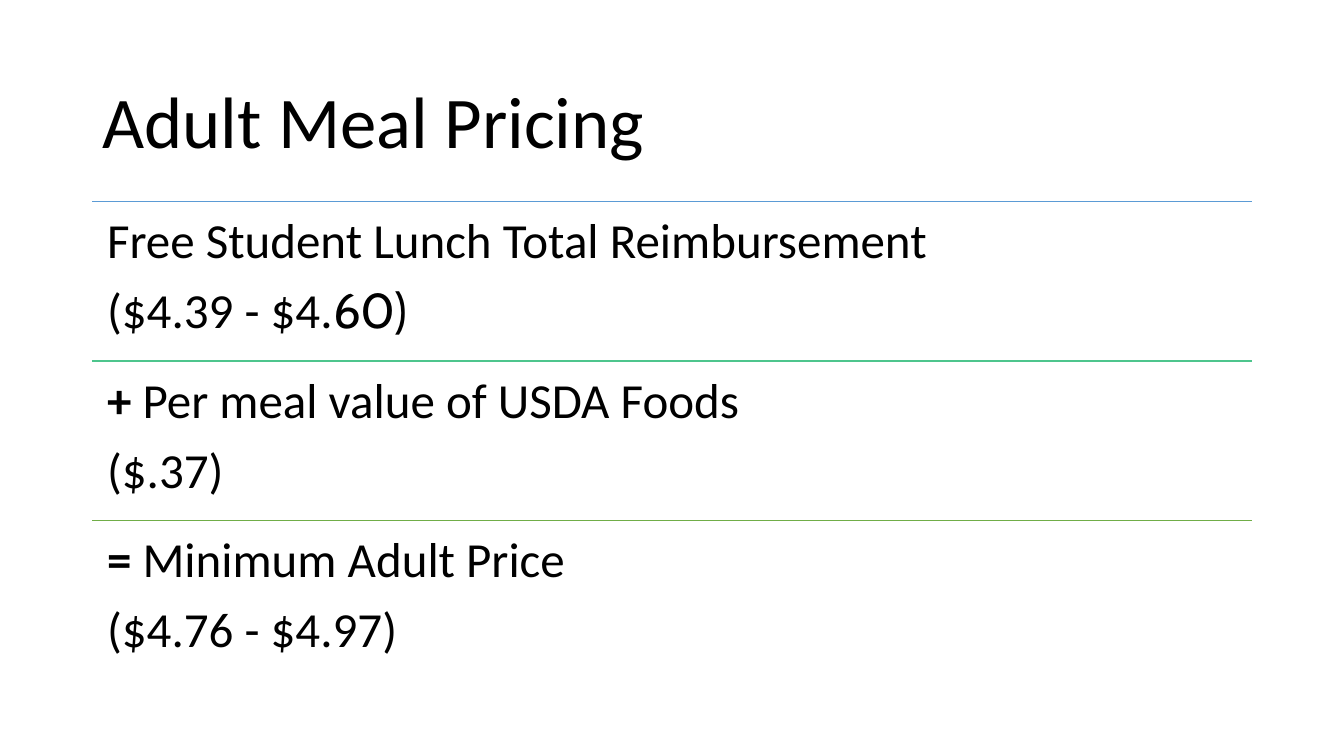
import pptx
import pptx.util
import pptx.dml.color
import pptx.enum.shapes
import pptx.enum.text
import pptx.oxml.ns
import lxml.etree

PX = 9525
BLACK = "000000"
ROWS = [
    ("5B9BD5", [[("Free Student Lunch Total Reimbursement", "Calibri", False)],
                [("($4.39 - $4.", "Calibri", False), ("60)", "Cabin", False)]]),
    ("4DC58D", [[("+", "Calibri", True),
                 (" Per meal value of USDA Foods", "Calibri", False)],
                [("($.37)", "Calibri", False)]]),
    ("70AD47", [[("=", "Calibri", True),
                 (" Minimum Adult Price", "Calibri", False)],
                [("($4.76 - $4.97)", "Calibri", False)]]),
]


def px(num):
    """Turn pixels into EMU."""
    return pptx.util.Emu(num * PX)


def color(code):
    """Turn a hex string into a colour."""
    return pptx.dml.color.RGBColor.from_string(code)


def add_text(slide, box, paras, size, after=0, pad=None, middle=False):
    """Place a text box and fill it run by run."""
    frame = slide.shapes.add_textbox(*map(px, box)).text_frame
    frame.word_wrap = True
    anchor = pptx.enum.text.MSO_ANCHOR
    frame.vertical_anchor = anchor.MIDDLE if middle else anchor.TOP
    if pad is not None:
        frame.margin_left = frame.margin_right = px(pad)
        frame.margin_top = frame.margin_bottom = px(pad)
    for index, runs in enumerate(paras):
        para = frame.add_paragraph() if index else frame.paragraphs[0]
        para.line_spacing = 0.9
        para.space_after = pptx.util.Pt(after)
        for text, face, bold in runs:
            run = para.add_run()
            run.text = text
            run.font.name = face
            run.font.size = pptx.util.Pt(size)
            run.font.bold = bold
            run.font.color.rgb = color(BLACK)


def add_rule(slide, left, top, width, code):
    """Draw a thin level line."""
    kind = pptx.enum.shapes.MSO_CONNECTOR.STRAIGHT
    rule = slide.shapes.add_connector(
        kind, px(left), px(top), px(left + width), px(top))
    rule.line.color.rgb = color(code)
    rule.line.width = pptx.util.Pt(1)
    lxml.etree.SubElement(rule._element.spPr, pptx.oxml.ns.qn("a:effectLst"))


def add_title(slide, box):
    """Place the slide title."""
    title = [[("Adult Meal Pricing", "Calibri", False)]]
    add_text(slide, box, title, 52, middle=True)


def add_list(slide, box):
    """Stack the ruled rows evenly in the box."""
    left, top, width, height = box
    step = height // len(ROWS)
    for index, (code, paras) in enumerate(ROWS):
        y = top + index * step
        add_rule(slide, left, y, width, code)
        add_text(slide, (left, y, width, step), paras, 35, after=12.25, pad=14)


def main():
    """Build and save the slide."""
    deck = pptx.Presentation()
    deck.slide_width, deck.slide_height = px(1280), px(720)
    slide = deck.slides.add_slide(deck.slide_layouts[6])
    add_title(slide, (88, 59, 1104, 119))
    add_list(slide, (88, 192, 1104, 456))
    deck.save("out.pptx")


if __name__ == "__main__":
    main()
